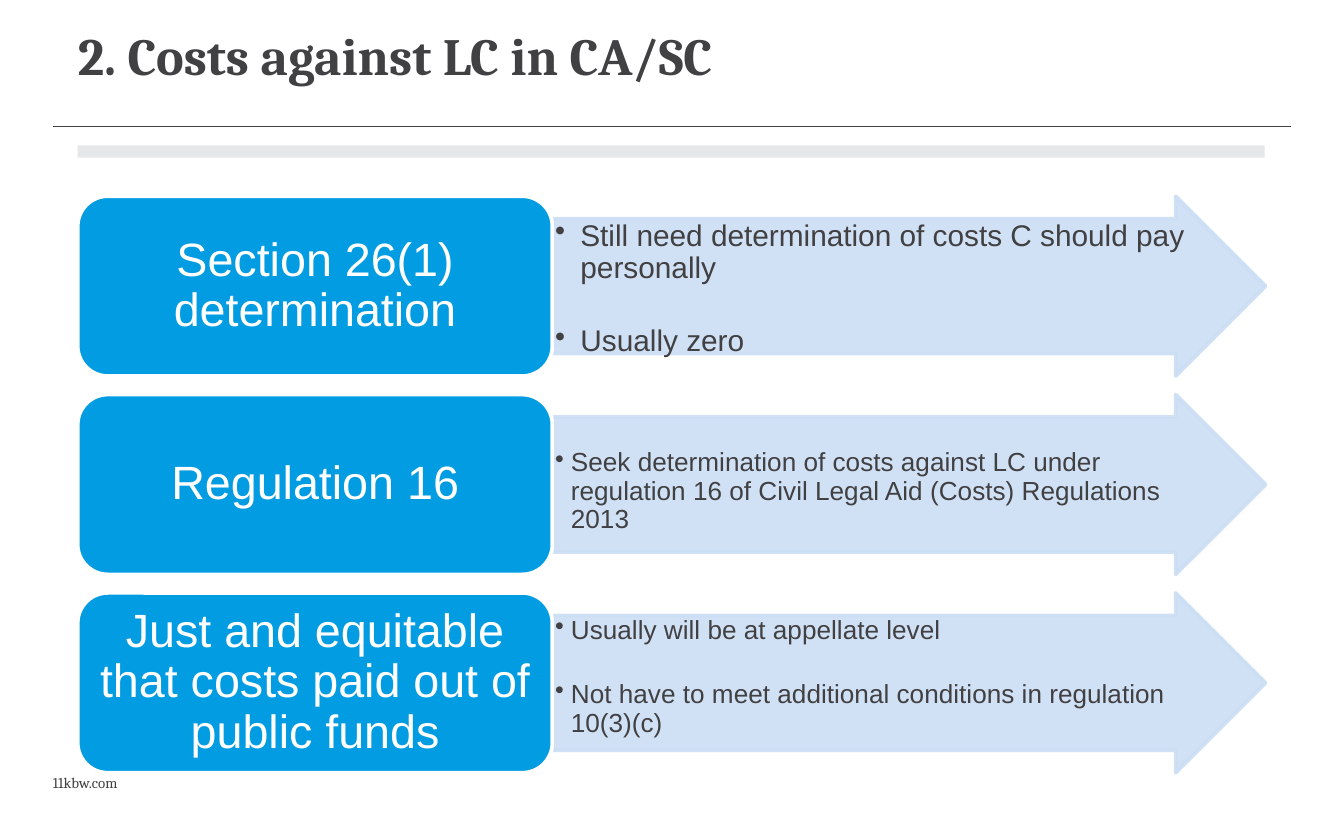
from lxml import etree
from pptx import Presentation
from pptx.dml.color import RGBColor
from pptx.enum.shapes import MSO_CONNECTOR, MSO_SHAPE
from pptx.enum.text import MSO_ANCHOR, MSO_AUTO_SIZE, PP_ALIGN
from pptx.oxml.ns import qn
from pptx.util import Cm, Pt

LEFT, CENTER = PP_ALIGN.LEFT, PP_ALIGN.CENTER
TOP, MIDDLE = MSO_ANCHOR.TOP, MSO_ANCHOR.MIDDLE
INK = RGBColor(0x41, 0x40, 0x42)
GREY = RGBColor(0xE6, 0xE7, 0xE8)
BLUE = RGBColor(0x02, 0x9C, 0xE2)
PALE = RGBColor(0xCC, 0xDE, 0xF4)
WHITE = RGBColor(0xFF, 0xFF, 0xFF)

TITLE = "2. Costs against LC in CA/SC"
FOOTER = "11kbw.com"
ROWS = [
    {"label": "Section 26(1) determination", "size": 16, "indent": 0.48, "inset": 0.03,
     "points": ["Still need determination of costs C should pay personally",
                "Usually zero"]},
    {"label": "Regulation 16", "size": 14, "indent": 0.3, "inset": 0.61,
     "points": ["Seek determination of costs against LC under regulation 16 of "
                "Civil Legal Aid (Costs) Regulations 2013"]},
    {"label": "Just and equitable that costs paid out of public funds",
     "size": 14, "indent": 0.3, "inset": 0.03,
     "points": ["Usually will be at appellate level",
                "Not have to meet additional conditions in regulation 10(3)(c)"]},
]
MARGIN, CONTENT_WIDTH = 1.47, 22.43
LABEL_WIDTH, ARROW_LEFT, ARROW_WIDTH = 8.97, 10.46, 13.46
ROW_TOP, ROW_HEIGHT, ROW_PITCH = 3.71, 3.4, 3.75
POINT_GAP = 1.38


def set_frame(frame, insets, anchor):
    frame.word_wrap = True
    frame.auto_size = MSO_AUTO_SIZE.NONE
    frame.vertical_anchor = anchor
    frame.margin_left, frame.margin_top, frame.margin_right, frame.margin_bottom = map(Cm, insets)


def add_span(para, text, size, font, color, bold=False):
    span = para.add_run()
    span.text = text
    span.font.size = Pt(size)
    span.font.name = font
    span.font.bold = bold
    span.font.color.rgb = color


def add_shape(slide, kind, place, fill, line=None):
    shape = slide.shapes.add_shape(kind, *map(Cm, place))
    shape.shadow.inherit = False
    shape.fill.solid()
    shape.fill.fore_color.rgb = fill
    if line is None:
        shape.line.fill.background()
    else:
        shape.line.color.rgb = line
        shape.line.width = Pt(2)
    return shape


def add_bullet(para, indent):
    props = para._p.get_or_add_pPr()
    props.set("marL", str(Cm(indent)))
    props.set("indent", str(-Cm(indent)))
    etree.SubElement(props, qn("a:buChar")).set("char", "•")


def add_arrow(slide, row, top):
    place = (ARROW_LEFT, top, ARROW_WIDTH, ROW_HEIGHT)
    arrow = add_shape(slide, MSO_SHAPE.RIGHT_ARROW, place, PALE, PALE)
    arrow.adjustments[0] = 0.75
    arrow.adjustments[1] = 0.5
    for color in arrow._element.spPr.iter(qn("a:srgbClr")):
        etree.SubElement(color, qn("a:alpha")).set("val", "90000")
    frame = arrow.text_frame
    set_frame(frame, (0.03, row["inset"], 0.03, 0.03), TOP)
    for index, point in enumerate(row["points"]):
        para = frame.add_paragraph() if index else frame.paragraphs[0]
        para.alignment = LEFT
        para.line_spacing = 0.9
        if index:
            para.space_before = Pt(round(row["size"] * POINT_GAP, 1))
        add_bullet(para, row["indent"])
        add_span(para, point, row["size"], "Arial", INK)


def add_label(slide, text, top):
    place = (MARGIN, top, LABEL_WIDTH, ROW_HEIGHT)
    label = add_shape(slide, MSO_SHAPE.ROUNDED_RECTANGLE, place, BLUE, WHITE)
    set_frame(label.text_frame, (0.25, 0.13, 0.25, 0.13), MIDDLE)
    para = label.text_frame.paragraphs[0]
    para.alignment = CENTER
    para.line_spacing = 0.9
    add_span(para, text, 25, "Arial", WHITE)


def main():
    deck = Presentation()
    deck.slide_width, deck.slide_height = Cm(25.4), Cm(15.88)
    slide = deck.slides.add_slide(deck.slide_layouts[5])

    title = slide.shapes.title
    title.left, title.top, title.width, title.height = map(Cm, (MARGIN, 0.43, CONTENT_WIDTH, 2.16))
    set_frame(title.text_frame, (0, 0, 0, 0), TOP)
    para = title.text_frame.paragraphs[0]
    para.alignment = LEFT
    add_span(para, TITLE, 28, "Cambria", INK, bold=True)

    rule = slide.shapes.add_connector(MSO_CONNECTOR.STRAIGHT, Cm(1), Cm(2.39), Cm(24.4), Cm(2.39))
    rule.line.color.rgb = INK
    rule.line.width = Pt(0.75)
    etree.SubElement(rule._element.spPr, qn("a:effectLst"))
    add_shape(slide, MSO_SHAPE.RECTANGLE, (MARGIN, 2.75, CONTENT_WIDTH, 0.23), GREY)

    for index, row in enumerate(ROWS):
        top = ROW_TOP + index * ROW_PITCH
        add_arrow(slide, row, top)
        add_label(slide, row["label"], top)

    footer = slide.shapes.add_textbox(*map(Cm, (1, 14.63, 11.2, 0.36)))
    set_frame(footer.text_frame, (0, 0, 0, 0), TOP)
    add_span(footer.text_frame.paragraphs[0], FOOTER, 8, "Cambria", INK)

    deck.save("out.pptx")


if __name__ == "__main__":
    main()
